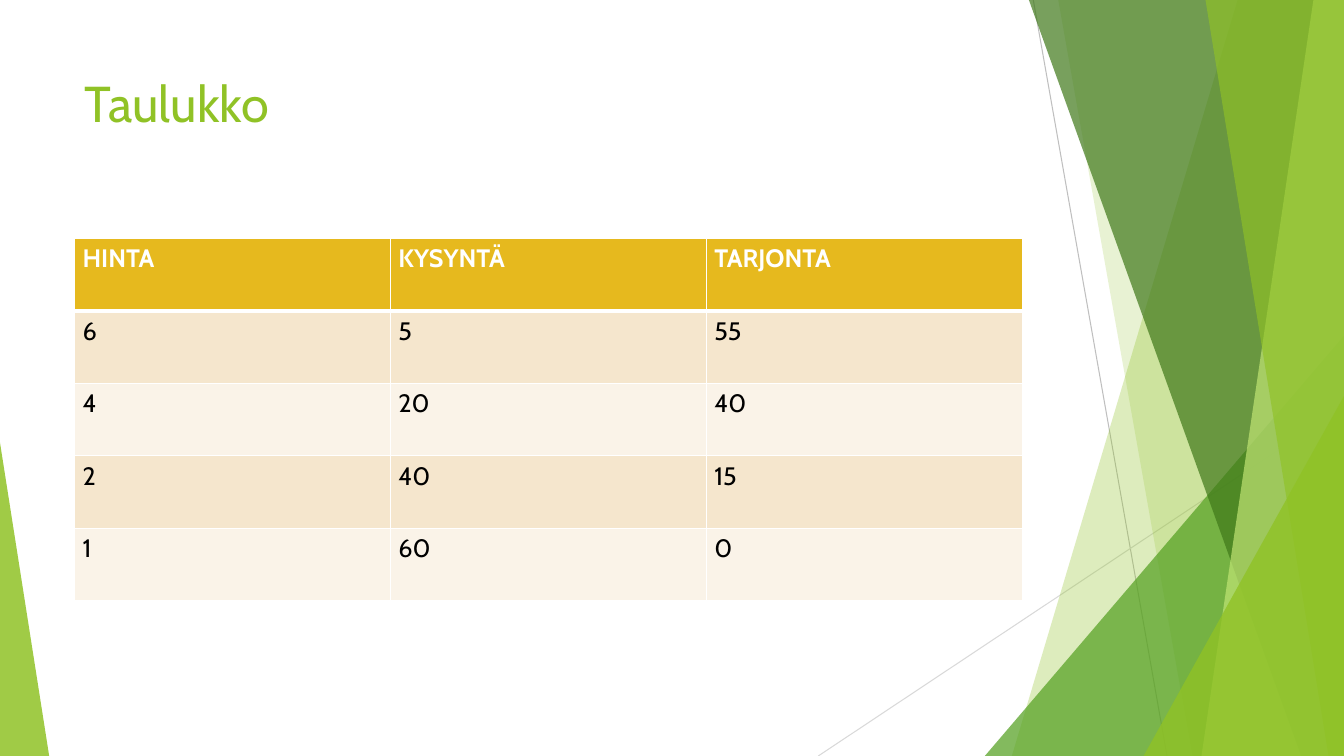
from dataclasses import dataclass

from lxml.etree import SubElement
from pptx import Presentation
from pptx.dml.color import RGBColor
from pptx.enum.shapes import MSO_CONNECTOR, MSO_SHAPE
from pptx.oxml.ns import qn
from pptx.util import Cm, Pt


@dataclass(frozen=True)
class Theme:
    font: str = "Cabin"
    title: int = 36
    body: int = 18
    white: str = "FFFFFF"
    black: str = "000000"
    lime: str = "90C226"
    green: str = "54A021"
    dark: str = "3F7819"
    pale: str = "C0E474"
    gold: str = "E6B91E"
    bands: tuple = ("F5E6CD", "FAF3E8")
    greys: tuple = ("BFBFBF", "D9D9D9")


THEME = Theme()
WIDE, HIGH = 33.87, 19.05
ROWS = [
    ("HINTA", "KYSYNTÄ", "TARJONTA"),
    ("6", "5", "55"),
    ("4", "20", "40"),
    ("2", "40", "15"),
    ("1", "60", "0"),
]


def rgb(code):
    return RGBColor.from_string(code)


def paint(shape, color, alpha):
    """Fill a shape with a see-through colour and no outline."""
    shape.shadow.inherit = False
    shape.line.fill.background()
    shape.fill.solid()
    shape.fill.fore_color.rgb = rgb(color)
    tint = shape.fill._xPr.find(qn("a:solidFill"))[0]
    SubElement(tint, qn("a:alpha"), val=str(alpha * 1000))


def write(para, text, size, color, bold=False):
    run = para.add_run()
    run.text = text
    font = run.font
    font.name, font.size, font.bold = THEME.font, Pt(size), bold
    font.color.rgb = rgb(color)


def ray(slide, start, end, color):
    line = slide.shapes.add_connector(
        MSO_CONNECTOR.STRAIGHT, *map(Cm, start + end))
    line.line.color.rgb = rgb(color)
    line.line.width = Pt(0.75)
    SubElement(line._element.spPr, qn("a:effectLst"))


def shard(slide, box, top, foot, color, alpha):
    """Four-sided piece from a slanted left edge to the box's right side."""
    x, y, w, h = box
    points = [(x + top, y), (x + w, y), (x + w, y + h), (x + foot, y + h)]
    spots = [(Cm(a), Cm(b)) for a, b in points]
    form = slide.shapes.build_freeform(*spots[0])
    form.add_line_segments(spots[1:], close=True)
    paint(form.convert_to_shape(), color, alpha)


def wedge(slide, box, peak, color, alpha):
    shape = slide.shapes.add_shape(
        MSO_SHAPE.ISOSCELES_TRIANGLE, *map(Cm, box))
    shape.adjustments[0] = peak
    paint(shape, color, alpha)


def corner(box, w, h):
    """Area of the given size in the lower right of a box."""
    return box[0] + box[2] - w, box[1] + box[3] - h, w, h


def facets(slide, box):
    x, y, w, h = box
    # Thin rays
    ray(slide, (x + 1.22, y), (x + 4.59, y + h), THEME.greys[0])
    ray(slide, (x + w, y + 10.24), (x - 4.2, y + h), THEME.greys[1])
    # Overlapping pieces, back to front
    shard(slide, box, 6.37, 0.68, THEME.lime, 30)
    shard(slide, box, 1.85, 5.23, THEME.lime, 20)
    wedge(slide, corner(box, w, 10.59), 1, THEME.green, 72)
    shard(slide, box, 1.11, 7.97, THEME.dark, 70)
    shard(slide, box, 8.28, 5.46, THEME.pale, 70)
    shard(slide, box, 5.56, 8.66, THEME.lime, 65)
    wedge(slide, corner(box, 5.05, 9.07), 1, THEME.lime, 80)


def heading(slide, box, text):
    frame = slide.shapes.add_textbox(*map(Cm, box)).text_frame
    frame.word_wrap = True
    write(frame.paragraphs[0], text, THEME.title, THEME.lime)


def edge(cell, side, width):
    line = SubElement(cell._tc.get_or_add_tcPr(), qn(f"a:ln{side}"),
                      w=str(Pt(width)))
    fill = SubElement(line, qn("a:solidFill"))
    SubElement(fill, qn("a:srgbClr"), val=THEME.white)


def grid(slide, box, rows):
    table = slide.shapes.add_table(
        len(rows), len(rows[0]), *map(Cm, box)).table
    for col in table.columns:
        col.width = Cm(box[2] / len(rows[0]))
    for r, row in enumerate(rows):
        table.rows[r].height = Cm(box[3] / len(rows))
        head = r == 0
        for c, text in enumerate(row):
            cell = table.cell(r, c)
            cell.margin_left = cell.margin_right = Cm(0.2)
            cell.margin_top = cell.margin_bottom = Cm(0.13)
            # Borders go before the fill; the header rule is thicker
            for side in "LRTB":
                thick = (r, side) in ((0, "B"), (1, "T"))
                edge(cell, side, 3 if thick else 1)
            cell.fill.solid()
            cell.fill.fore_color.rgb = rgb(
                THEME.gold if head else THEME.bands[(r - 1) % 2])
            write(cell.text_frame.paragraphs[0], text, THEME.body,
                  THEME.white if head else THEME.black, head)


def main():
    deck = Presentation()
    deck.slide_width, deck.slide_height = Cm(WIDE), Cm(HIGH)
    slide = deck.slides.add_slide(deck.slide_layouts[6])
    # Decoration on both sides
    facets(slide, (24.82, 0, 9.05, HIGH))
    wedge(slide, (0, 11.15, 1.24, 7.9), 0, THEME.lime, 85)
    # Title and table
    heading(slide, (1.88, 1.7, 23.88, 3.66), "Taulukko")
    grid(slide, (1.88, 6, 23.88, 9.14), ROWS)
    deck.save("out.pptx")


if __name__ == "__main__":
    main()
